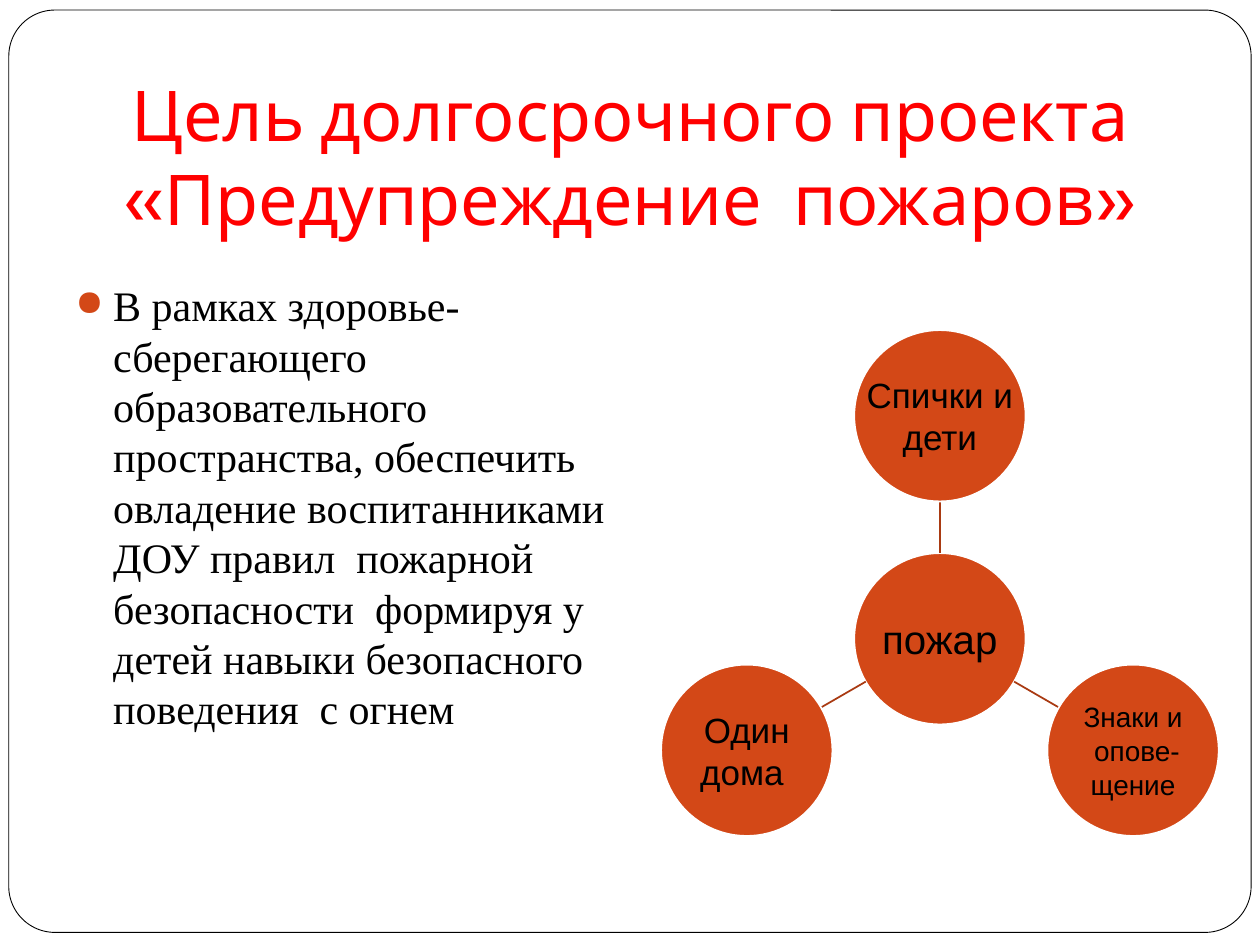
from math import cos, radians, sin

from lxml.etree import SubElement
from pptx import Presentation
from pptx.dml.color import RGBColor
from pptx.enum.shapes import MSO_CONNECTOR, MSO_SHAPE
from pptx.enum.text import MSO_ANCHOR, PP_ALIGN
from pptx.oxml.ns import qn
from pptx.util import Inches, Pt

TITLE = "Цель долгосрочного проекта «Предупреждение  пожаров»"
GOAL = ("В рамках здоровье-сберегающего образовательного  пространства, "
        "обеспечить овладение воспитанниками ДОУ правил  пожарной безопасности  "
        "формируя у детей навыки безопасного поведения  с огнем")
HUB = (["пожар"], 23)
TOPICS = [  # paragraphs, text size
    (["Спички и дети"], 20),
    (["Знаки и", " опове-щение"], 16),
    (["Один дома "], 20),
]
ORANGE, RUST, RED, BLACK, WHITE = "D34817", "A93A12", "FF0000", "000000", "FFFFFF"
HUB_X, HUB_Y = 7.46, 5.07
DIAMETER, ORBIT = 1.36, 1.77


def color(target, value):
    target.rgb = RGBColor.from_string(value)


def paint(sp, fill, line, width):
    sp.shadow.inherit = False
    sp.fill.solid()
    color(sp.fill.fore_color, fill)
    color(sp.line.color, line)
    sp.line.width = Pt(width)


def write(tf, paragraphs, font, size, ink, align, anchor, inset=None):
    tf.word_wrap = True
    tf.vertical_anchor = anchor
    for side, value in (inset or {}).items():
        setattr(tf, f"margin_{side}", Inches(value))
    for i, text in enumerate(paragraphs):
        p = tf.add_paragraph() if i else tf.paragraphs[0]
        p.alignment = align
        r = p.add_run()
        r.text = text
        r.font.name, r.font.size = font, Pt(size)
        color(r.font.color, ink)


def add_bullet(p, char, ink, percent, indent):
    pPr = p._p.get_or_add_pPr()
    pPr.set("marL", str(Inches(indent)))
    pPr.set("indent", str(-Inches(indent)))
    SubElement(SubElement(pPr, qn("a:buClr")), qn("a:srgbClr"), val=ink)
    SubElement(pPr, qn("a:buSzPct"), val=str(percent * 1000))
    SubElement(pPr, qn("a:buChar"), char=char)


def polar(radius, angle):
    """Point at a distance and an angle in degrees from the hub's centre."""
    a = radians(angle)
    return HUB_X + radius * cos(a), HUB_Y + radius * sin(a)


def add_circle(shapes, center, paragraphs, size):
    x, y = center
    box = [Inches(v) for v in (x - DIAMETER / 2, y - DIAMETER / 2, DIAMETER, DIAMETER)]
    paint(shapes.add_shape(MSO_SHAPE.OVAL, *box), ORANGE, WHITE, 1)
    inset = dict.fromkeys(("left", "top", "right", "bottom"), 0.01)
    write(shapes.add_textbox(*box).text_frame, paragraphs, "Arial", size, BLACK,
          PP_ALIGN.CENTER, MSO_ANCHOR.MIDDLE, inset)


def add_spoke(shapes, angle):
    ends = polar(DIAMETER / 2, angle) + polar(ORBIT - DIAMETER / 2, angle)
    line = shapes.add_connector(MSO_CONNECTOR.STRAIGHT, *[Inches(v) for v in ends])
    color(line.line.color, RUST)
    line.line.width = Pt(1)
    SubElement(line._element.spPr, qn("a:effectLst"))


def main():
    prs = Presentation()
    prs.slide_width, prs.slide_height = Inches(10), Inches(7.5)
    shapes = prs.slides.add_slide(prs.slide_layouts[5]).shapes

    title = shapes.title
    frame = shapes.add_shape(MSO_SHAPE.ROUNDED_RECTANGLE, Inches(0.07), Inches(0.08),
                             Inches(9.86), Inches(7.32))
    frame.adjustments[0] = 0.05
    paint(frame, WHITE, BLACK, 0.5)
    title._element.addprevious(frame._element)

    place = {"left": 0.5, "top": 0.5, "width": 9, "height": 1.5}
    for name, value in place.items():
        setattr(title, name, Inches(value))
    write(title.text_frame, [TITLE], "Cabin", 40, RED, PP_ALIGN.CENTER,
          MSO_ANCHOR.BOTTOM, {"bottom": 0.1})

    goal = shapes.add_textbox(Inches(0.5), Inches(2.17), Inches(4.42), Inches(4.25))
    write(goal.text_frame, [GOAL], "Times New Roman", 24, BLACK, PP_ALIGN.LEFT,
          MSO_ANCHOR.TOP)
    p = goal.text_frame.paragraphs[0]
    p.space_before = Pt(5.8)
    add_bullet(p, "●", ORANGE, 85, 0.3)

    add_circle(shapes, (HUB_X, HUB_Y), *HUB)
    for i, topic in enumerate(TOPICS):
        angle = -90 + i * 360 / len(TOPICS)
        add_spoke(shapes, angle)
        add_circle(shapes, polar(ORBIT, angle), *topic)

    prs.save("out.pptx")


if __name__ == "__main__":
    main()
